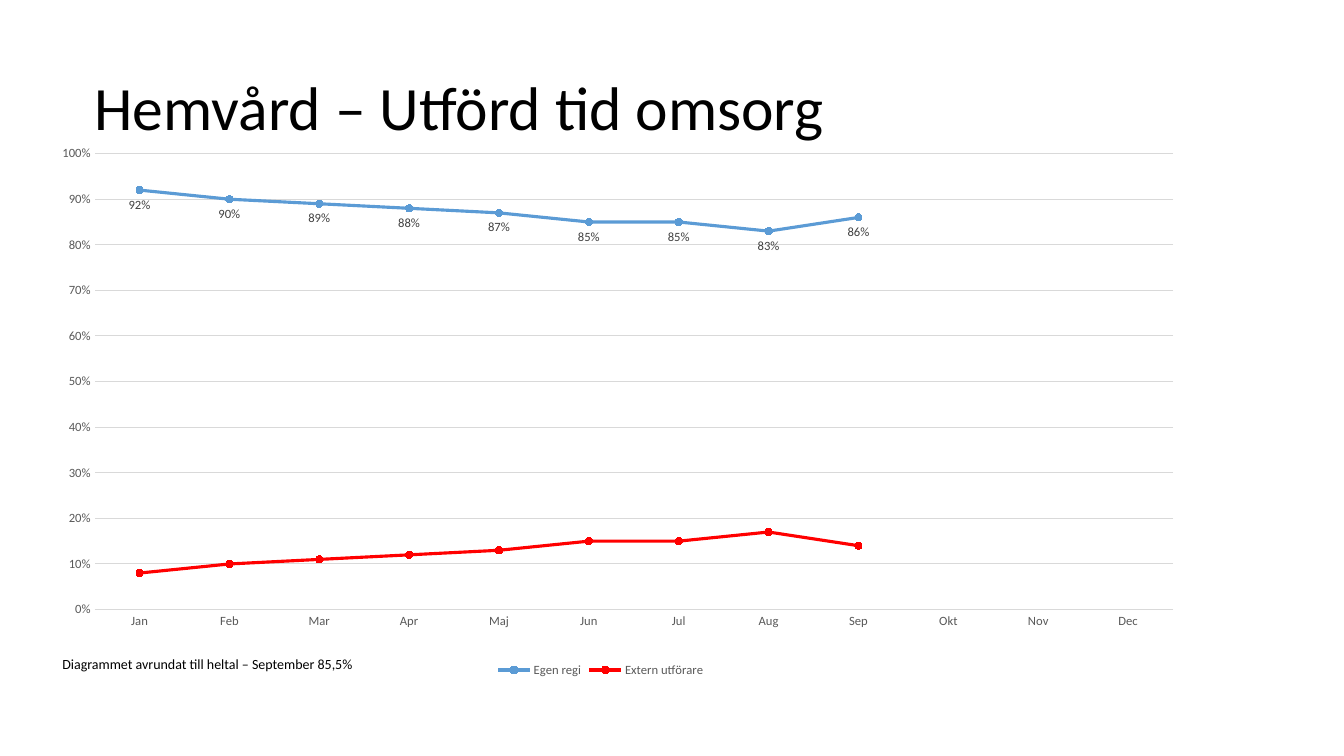
import pptx
import pptx.util
import pptx.dml.color
import pptx.chart.data
import pptx.enum.chart
import pptx.enum.text
import pptx.oxml
import pptx.oxml.ns

Inches = pptx.util.Inches
Pt = pptx.util.Pt
enum = pptx.enum.chart
hues = {"black": "000000", "text": "595959", "label": "404040",
        "grid": "D9D9D9", "own": "5B9BD5", "extern": "FF0000"}


def tint(name):
    return pptx.dml.color.RGBColor.from_string(hues[name])


def style(font, size, hue):
    for key, value in {"name": "Calibri", "size": Pt(size), "bold": False}.items():
        setattr(font, key, value)
    font.color.rgb = tint(hue)


deck = pptx.Presentation()
deck.slide_width = Inches(13.33)
deck.slide_height = Inches(7.5)
slide = deck.slides.add_slide(deck.slide_layouts[6])

data = pptx.chart.data.CategoryChartData(number_format="0%")
data.categories = ["Jan", "Feb", "Mar", "Apr", "Maj", "Jun",
                   "Jul", "Aug", "Sep", "Okt", "Nov", "Dec"]
rest = [None] * 3
data.add_series("Egen regi", [0.92, 0.9, 0.89, 0.88, 0.87, 0.85, 0.85, 0.83, 0.86] + rest)
data.add_series("Extern utförare", [0.08, 0.1, 0.11, 0.12, 0.13, 0.15, 0.15, 0.17, 0.14] + rest)
chart = slide.shapes.add_chart(
    enum.XL_CHART_TYPE.LINE_MARKERS, Inches(0.28), Inches(1.45),
    Inches(11.36), Inches(5.31), data).chart
style(chart.font, 10, "black")
chart.has_title = False
chart.has_legend = True
chart.legend.position = enum.XL_LEGEND_POSITION.BOTTOM
chart.legend.include_in_layout = False
style(chart.legend.font, 9, "text")

months, share = chart.category_axis, chart.value_axis
for axis in (months, share):
    axis.major_tick_mark = axis.minor_tick_mark = enum.XL_TICK_MARK.NONE
    style(axis.tick_labels.font, 9, "text")
months.has_major_gridlines = False
for key, value in {"minimum_scale": 0, "maximum_scale": 1, "major_unit": 0.1,
                   "has_major_gridlines": True}.items():
    setattr(share, key, value)
share.format.line.fill.background()
share.tick_labels.number_format = "0%"
share.tick_labels.number_format_is_linked = False
for line in (months.format.line, share.major_gridlines.format.line):
    line.color.rgb = tint("grid")
    line.width = Pt(0.75)

plot = chart.plots[0]
plot.vary_by_categories = False
for series, hue in zip(plot.series, ("own", "extern")):
    series.smooth = False
    series.format.line.color.rgb = tint(hue)
    series.format.line.width = Pt(2.25)
    mark = series.marker
    mark.style = enum.XL_MARKER_STYLE.CIRCLE
    mark.size = 5
    mark.format.fill.solid()
    mark.format.fill.fore_color.rgb = tint(hue)
    mark.format.line.color.rgb = tint(hue)

labels = plot.series[0].data_labels
for key, value in {"show_value": True, "number_format": "0%",
                   "number_format_is_linked": False,
                   "position": enum.XL_LABEL_POSITION.BELOW}.items():
    setattr(labels, key, value)
style(labels.font, 9, "label")

area = chart._chartSpace.chart.plotArea
for old in area.findall(pptx.oxml.ns.qn("c:layout")):
    area.remove(old)
modes = '<c:layoutTarget val="inner"/><c:xMode val="edge"/><c:yMode val="edge"/>'
sizes = "".join(f'<c:{key} val="{value}"/>' for key, value in
                {"x": 0.058, "y": 0.014, "w": 0.942, "h": 0.852}.items())
area.insert(0, pptx.oxml.parse_xml(
    f'<c:layout {pptx.oxml.ns.nsdecls("c")}><c:manualLayout>'
    f'{modes}{sizes}</c:manualLayout></c:layout>'))

anchor = pptx.enum.text.MSO_ANCHOR
for text, place, size, side, space in (
        ("Hemvård – Utförd tid omsorg", (0.84, 0.37, 11.5, 1.45), 44, anchor.MIDDLE, 0.9),
        ("Diagrammet avrundat till heltal – September 85,5%",
         (0.52, 6.45, 3.12, 0.27), 10, anchor.TOP, 1.0)):
    frame = slide.shapes.add_textbox(*map(Inches, place)).text_frame
    frame.word_wrap = True
    frame.vertical_anchor = side
    para = frame.paragraphs[0]
    para.line_spacing = space
    run = para.add_run()
    run.text = text
    style(run.font, size, "black")

deck.save("out.pptx")
